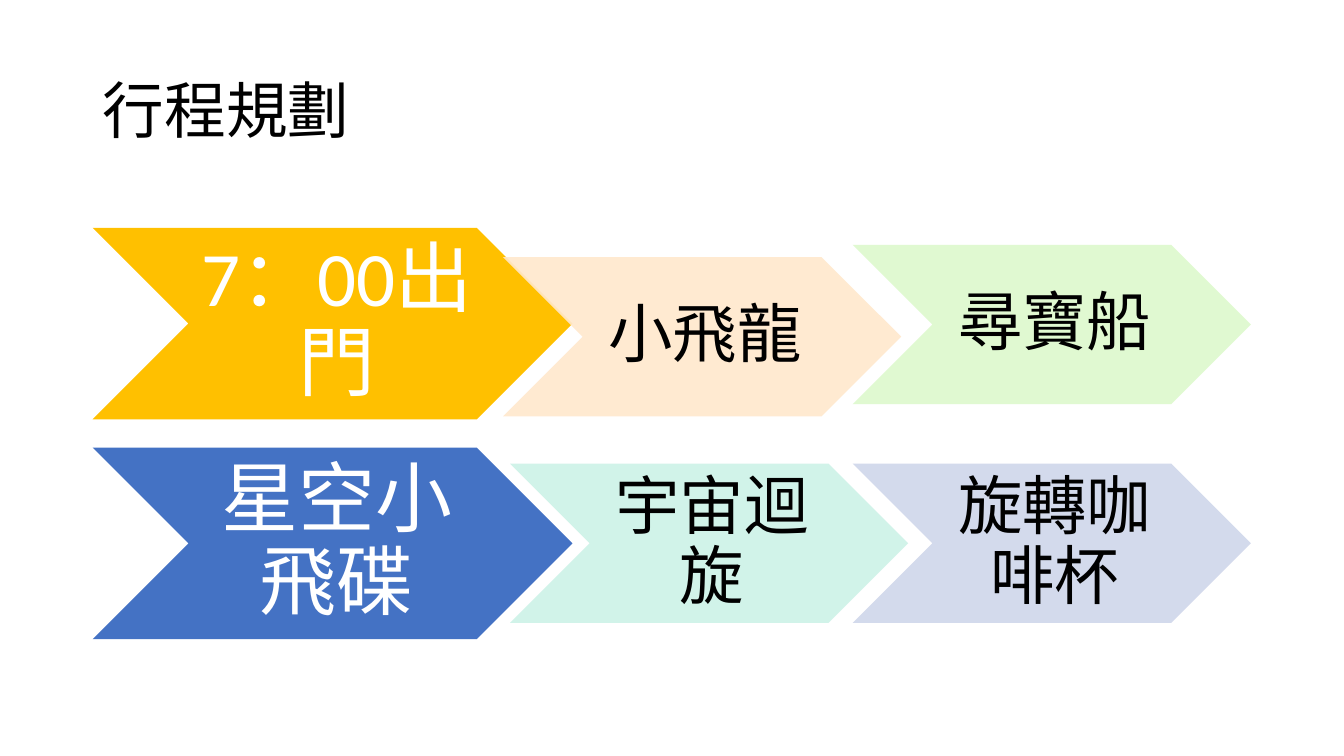
import pptx
import pptx.util
import pptx.dml.color
import pptx.enum.shapes
import pptx.enum.text
import pptx.oxml.ns
import pptx.oxml.xmlchemy

TITLE = "行程規劃"
HEX = {"black": "000000", "white": "FFFFFF", "gold": "FFC000", "peach": "FFE8CC",
       "lime": "DDF9CC", "blue": "4472C4", "mint": "CDF2E7", "lilac": "CFD6EA"}
LEAD = {"wide": 476, "high": 190, "size": 55, "ink": "white", "pad": (8, 4), "alpha": 100}
STOP = {"wide": 395, "high": 158, "size": 46, "ink": "black", "pad": (6, 3), "alpha": 90}
STEPS = [
    ("7：00出門", 92, 226, "gold", LEAD),
    ("小飛龍", 499, 255, "peach", STOP),
    ("尋寶船", 846, 243, "lime", STOP),
    ("星空小飛碟", 92, 444, "blue", LEAD),
    ("宇宙迴旋", 506, 460, "mint", STOP),
    ("旋轉咖啡杯", 846, 460, "lilac", STOP),
]
PX = 9144
ALIGN = pptx.enum.text.PP_ALIGN


def px(*nums):
    return [pptx.util.Emu(round(num * PX)) for num in nums]


def color(name):
    return pptx.dml.color.RGBColor.from_string(HEX[name])


def write(box, text, size, ink="black", align=ALIGN.LEFT, pad=(10, 5), right=10):
    frame = box.text_frame
    frame.word_wrap = True
    frame.auto_size = pptx.enum.text.MSO_AUTO_SIZE.NONE
    frame.vertical_anchor = pptx.enum.text.MSO_ANCHOR.MIDDLE
    frame.margin_left, frame.margin_right = px(pad[0], right)
    frame.margin_top, frame.margin_bottom = px(pad[1], pad[1])
    para = frame.paragraphs[0]
    para.alignment = align
    para.line_spacing = 0.9
    run = para.add_run()
    run.text = text
    run.font.name = "Calibri"
    run.font.size = pptx.util.Pt(size)
    run.font.color.rgb = color(ink)


def arrow(slide, left, top, fill, kind):
    shape = slide.shapes.add_shape(pptx.enum.shapes.MSO_SHAPE.CHEVRON,
                                   *px(left, top, kind["wide"], kind["high"]))
    shape.shadow.inherit = False
    shape.line.fill.background()
    shape.fill.solid()
    shape.fill.fore_color.rgb = color(fill)
    if kind["alpha"] < 100:
        tint = shape.element.spPr.find(".//" + pptx.oxml.ns.qn("a:srgbClr"))
        alpha = pptx.oxml.xmlchemy.OxmlElement("a:alpha")
        alpha.set("val", str(kind["alpha"] * 1000))
        tint.append(alpha)


def main():
    deck = pptx.Presentation()
    deck.slide_width, deck.slide_height = px(1333.33, 750)
    slide = deck.slides.add_slide(deck.slide_layouts[5])
    title = slide.shapes.title
    title.left, title.top, title.width, title.height = px(92, 40, 1150, 145)
    write(title, TITLE, 44)
    for text, left, top, fill, kind in STEPS:
        arrow(slide, left, top, fill, kind)
        wide, high = kind["wide"], kind["high"]
        notch = high / 2
        box = slide.shapes.add_textbox(*px(left + notch, top, wide - 2 * notch, high))
        write(box, text, kind["size"], ink=kind["ink"], align=ALIGN.CENTER,
              pad=kind["pad"], right=0)
    deck.save("out.pptx")


if __name__ == "__main__":
    main()
